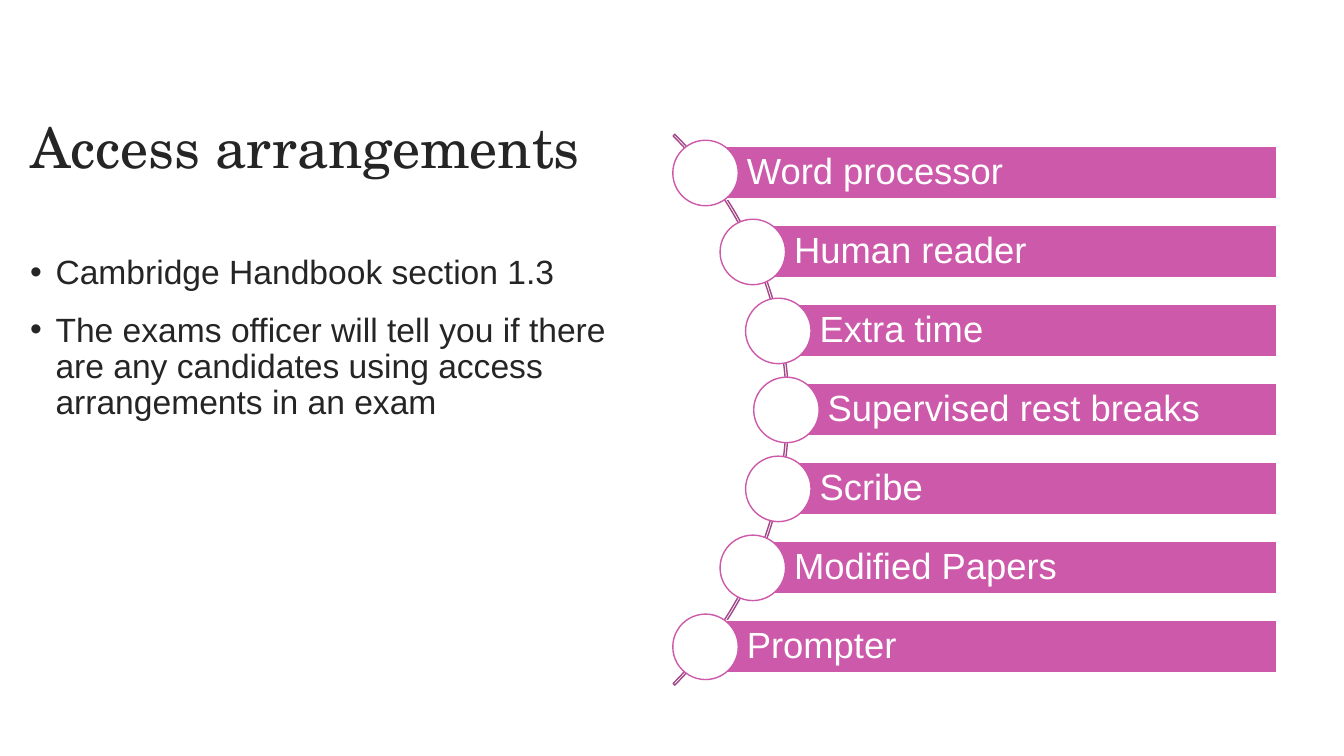
import math
import pptx
import pptx.dml.color
import pptx.enum.shapes
import pptx.enum.text
import pptx.oxml
import pptx.oxml.ns
import pptx.util

Cm = pptx.util.Cm
Pt = pptx.util.Pt
RGB = pptx.dml.color.RGBColor.from_string
SHAPE = pptx.enum.shapes.MSO_SHAPE
ANCHOR = pptx.enum.text.MSO_ANCHOR

theme = {
    "ink": "252525",
    "white": "FFFFFF",
    "pink": "CC59AA",
    "plum": "A34788",
    "title": {"name": "TeX Gyre Schola", "size": Pt(40)},
    "body": {"name": "Arial", "size": Pt(24)},
    "label": {"name": "Arial", "size": Pt(26)},
}


def write(sp, lines, font, color, frame, bullet=False):
    tf = sp.text_frame
    for key, value in {"word_wrap": True, **frame}.items():
        setattr(tf, key, value)
    for i, line in enumerate(lines):
        p = tf.paragraphs[0] if i == 0 else tf.add_paragraph()
        p.alignment = pptx.enum.text.PP_ALIGN.LEFT
        p.line_spacing = 0.9
        if bullet:
            p.space_before = Pt(10 if i else 0)
            p.space_after = Pt(5)
            pPr = p._p.get_or_add_pPr()
            pPr.set("marL", str(Cm(0.64)))
            pPr.set("indent", str(-Cm(0.64)))
            ns = pptx.oxml.ns.nsdecls("a")
            pPr.append(pptx.oxml.parse_xml(f'<a:buFont {ns} typeface="Arial"/>'))
            pPr.append(pptx.oxml.parse_xml(f'<a:buChar {ns} char="•"/>'))
        r = p.add_run()
        r.text = line
        for key, value in theme[font].items():
            setattr(r.font, key, value)
        r.font.color.rgb = RGB(theme[color])


def shape(kind, left, top, width, height, fill, line):
    sp = s.shapes.add_shape(kind, Cm(left), Cm(top), Cm(width), Cm(height))
    sp.shadow.inherit = False
    if fill:
        sp.fill.solid()
        sp.fill.fore_color.rgb = RGB(theme[fill])
    else:
        sp.fill.background()
    sp.line.color.rgb = RGB(theme[line])
    sp.line.width = Pt(1)
    return sp


prs = pptx.Presentation()
prs.slide_width, prs.slide_height = Cm(33.87), Cm(19.05)
s = prs.slides.add_slide(prs.slide_layouts[6])

title = s.shapes.add_textbox(Cm(0.51), Cm(2.79), Cm(32.51), Cm(2.01))
write(title, ["Access arrangements"], "title", "ink",
      {"vertical_anchor": ANCHOR.MIDDLE})

body = s.shapes.add_textbox(Cm(0.51), Cm(6.32), Cm(16), Cm(11.99))
write(body, [
    "Cambridge Handbook section 1.3",
    "The exams officer will tell you if there are any candidates "
    "using access arrangements in an exam",
], "body", "ink", {"vertical_anchor": ANCHOR.TOP}, bullet=True)

arc_size = 19.63
arc = shape(SHAPE.BLOCK_ARC, 0.25, 0.51, arc_size, arc_size, None, "plum")
for i, value in enumerate([189, 27, 0.003]):
    arc.adjustments[i] = value

arrangements = ["Word processor", "Human reader", "Extra time",
                "Supervised rest breaks", "Scribe", "Modified Papers", "Prompter"]
center_x, center_y, radius = 10.06, 10.33, 9.76
pitch, bar_height, bar_right, dot = 1.99, 1.32, 32.18, 1.65
label_frame = {
    "vertical_anchor": ANCHOR.MIDDLE,
    "margin_left": Cm(1.04),
    "margin_right": Cm(0.18),
    "margin_top": Cm(0.18),
    "margin_bottom": Cm(0.18),
}
for i, name in enumerate(arrangements):
    dy = (i - (len(arrangements) - 1) / 2) * pitch
    x = center_x + math.sqrt(radius ** 2 - dy ** 2)
    y = center_y + dy
    bar = shape(SHAPE.RECTANGLE, x, y - bar_height / 2, bar_right - x, bar_height,
                "pink", "white")
    write(bar, [name], "label", "white", label_frame)
    shape(SHAPE.OVAL, x - dot / 2, y - dot / 2, dot, dot, "white", "pink")

prs.save("out.pptx")
